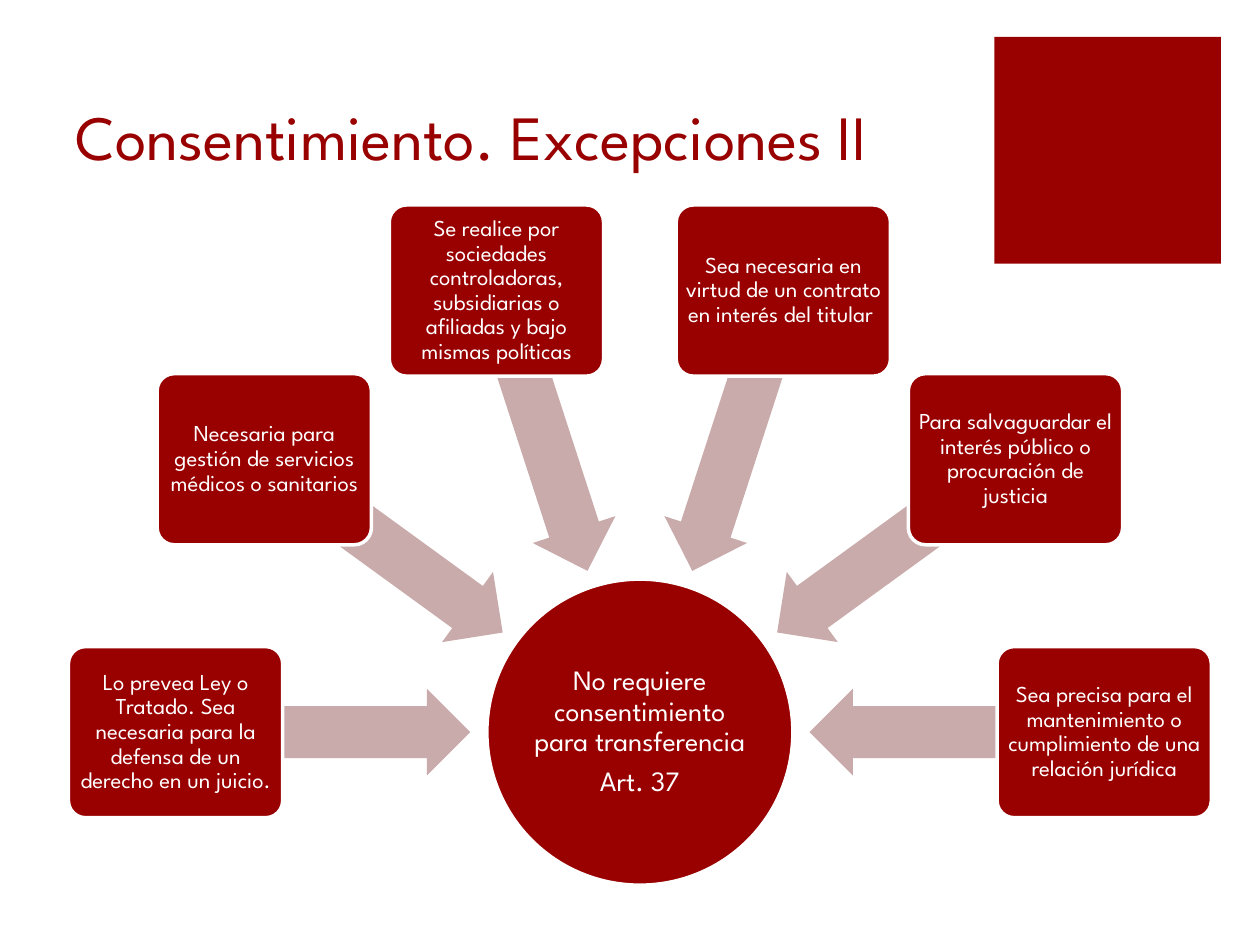
from math import cos, radians, sin

from pptx import Presentation
from pptx.dml.color import RGBColor
from pptx.enum.shapes import MSO_SHAPE
from pptx.enum.text import MSO_ANCHOR, PP_ALIGN
from pptx.util import Cm, Pt

FONT = "League Spartan"
RED, PINK, WHITE = "990000", "CAABAB", "FFFFFF"

# Radial layout, in centimetres
CENTER_X, CENTER_Y = 12.9, 14.76
HUB_SIZE = 6.17
CARD_RADIUS, CARD_WIDTH, CARD_HEIGHT = 9.36, 4.32, 3.45
ARROW_RADIUS, ARROW_LENGTH, ARROW_WIDTH = 6.39, 5.94, 1.75
STEP = 36

EXCEPTIONS = [
    "Lo prevea Ley o Tratado. Sea necesaria para la defensa de un derecho en un juicio.",
    "Necesaria para gestión de servicios médicos o sanitarios",
    "Se realice por sociedades controladoras, subsidiarias o afiliadas y bajo mismas políticas",
    "Sea necesaria en virtud de un contrato en interés del titular ",
    "Para salvaguardar el interés público o procuración de justicia",
    "Sea precisa para el mantenimiento o cumplimiento de una relación jurídica",
]


def color(hex_value):
    return RGBColor.from_string(hex_value)


def on_circle(radius, angle):
    """Point at an angle counted clockwise from the left of the hub."""
    turn = radians(angle)
    return CENTER_X - radius * cos(turn), CENTER_Y - radius * sin(turn)


class SlideBuilder:
    def __init__(self, slide):
        self.slide = slide

    def block(self, kind, x, y, width, height, fill, outlined=False):
        """Filled shape centred on x, y."""
        shape = self.slide.shapes.add_shape(
            kind, Cm(x - width / 2), Cm(y - height / 2), Cm(width), Cm(height))
        shape.shadow.inherit = False
        shape.fill.solid()
        shape.fill.fore_color.rgb = color(fill)
        if outlined:
            shape.line.color.rgb = color(WHITE)
            shape.line.width = Pt(2)
        else:
            shape.line.fill.background()
        return shape

    def set_text(self, shape, text, size, font_color, anchor=MSO_ANCHOR.MIDDLE):
        frame = shape.text_frame
        frame.text = text
        frame.word_wrap = True
        frame.vertical_anchor = anchor
        for paragraph in frame.paragraphs:
            paragraph.alignment = PP_ALIGN.CENTER
            for run in paragraph.runs:
                run.font.name = FONT
                run.font.size = Pt(size)
                run.font.color.rgb = color(font_color)
        return frame

    def label(self, shape, text, size, inset):
        frame = self.set_text(shape, text, size, WHITE)
        frame.margin_left = frame.margin_right = Cm(inset)
        frame.margin_top = frame.margin_bottom = Cm(inset)
        for paragraph in frame.paragraphs:
            paragraph.line_spacing = 0.9
            paragraph.space_after = Pt(size * 0.35)

    def title(self, text):
        box = self.slide.shapes.add_textbox(Cm(0.46), Cm(0.43), Cm(18.08), Cm(3.18))
        self.set_text(box, text, 36, RED, MSO_ANCHOR.BOTTOM)

    def hub(self, text):
        circle = self.block(MSO_SHAPE.OVAL, CENTER_X, CENTER_Y,
                            HUB_SIZE, HUB_SIZE, RED, outlined=True)
        self.label(circle, text, 16, 0.03)

    def arrow(self, angle):
        arrow = self.block(MSO_SHAPE.LEFT_ARROW, *on_circle(ARROW_RADIUS, angle),
                           ARROW_LENGTH, ARROW_WIDTH, PINK)
        arrow.adjustments[0] = 0.6
        arrow.adjustments[1] = 0.5
        arrow.rotation = (180 + angle) % 360

    def card(self, angle, text):
        card = self.block(MSO_SHAPE.ROUNDED_RECTANGLE, *on_circle(CARD_RADIUS, angle),
                          CARD_WIDTH, CARD_HEIGHT, RED, outlined=True)
        card.adjustments[0] = 0.1
        self.label(card, text, 13, 0.08)


def main():
    presentation = Presentation()
    presentation.slide_width, presentation.slide_height = Cm(25.4), Cm(19.05)
    builder = SlideBuilder(presentation.slides.add_slide(presentation.slide_layouts[6]))

    # Corner decoration
    builder.block(MSO_SHAPE.RECTANGLE, 22.33, 3.03, 4.57, 4.57, RED)

    # Exceptions pointing at the hub
    builder.hub("No requiere consentimiento para transferencia\nArt. 37")
    for index, exception in enumerate(EXCEPTIONS):
        builder.arrow(index * STEP)
        builder.card(index * STEP, exception)

    # Heading
    builder.title("Consentimiento. Excepciones II")

    presentation.save("out.pptx")


if __name__ == "__main__":
    main()
